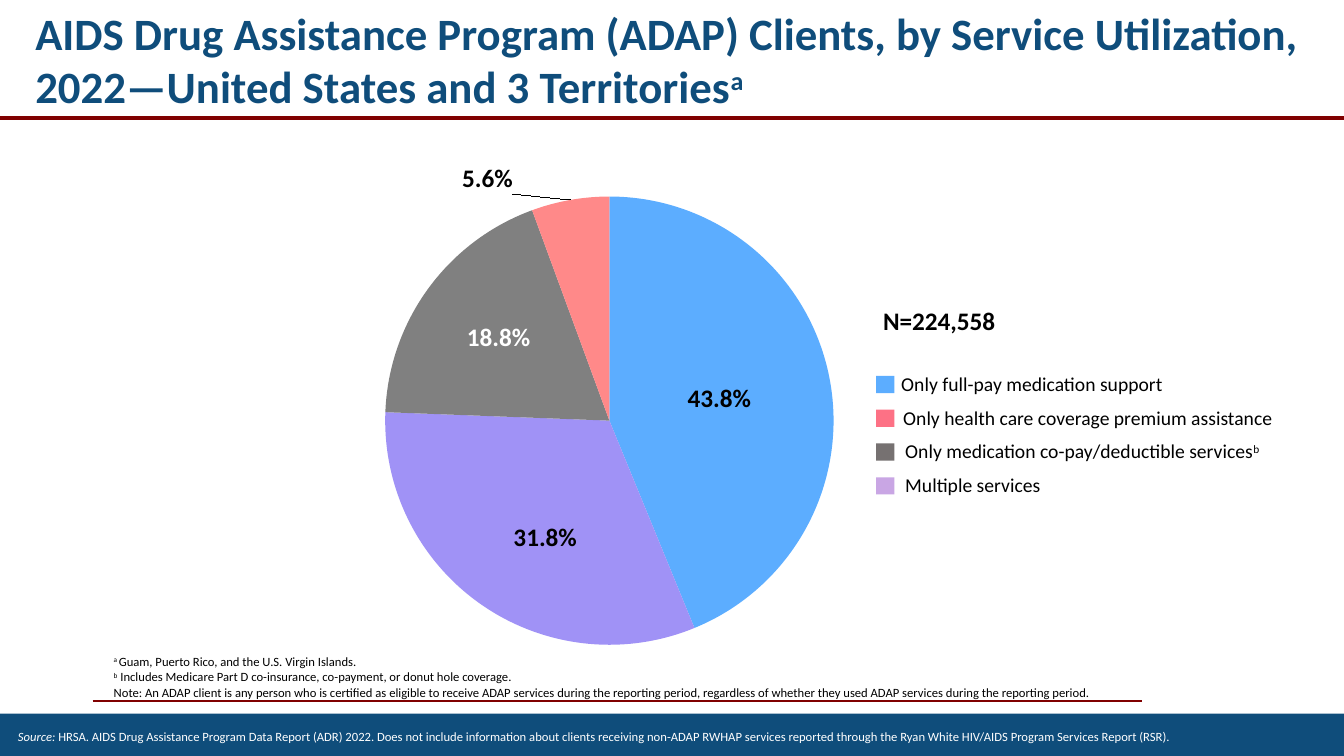
from lxml import etree
from pptx import Presentation
from pptx.chart.data import CategoryChartData
from pptx.dml.color import RGBColor
from pptx.enum.chart import XL_CHART_TYPE, XL_LABEL_POSITION as POS
from pptx.enum.shapes import MSO_CONNECTOR, MSO_SHAPE
from pptx.enum.text import MSO_ANCHOR, MSO_AUTO_SIZE, PP_ALIGN
from pptx.oxml import parse_xml
from pptx.oxml.ns import nsdecls, qn
from pptx.util import Inches, Pt

COLORS = {
    "navy": "0F4D7B", "maroon": "800000", "white": "FFFFFF", "black": "000000",
    "blue": "5CADFF", "purple": "A092F6", "gray": "808080", "coral": "FF8989",
    "key_coral": "FD7185", "key_gray": "767171", "key_lilac": "C9A6E4",
}


def rgb(name):
    return RGBColor.from_string(COLORS[name])


def write(tf, paragraphs, size, color="black", bold=False, anchor=MSO_ANCHOR.TOP):
    """Fill a text frame; each run is (text, style), style "", "italic" or "super"."""
    tf.word_wrap = True
    tf.auto_size = MSO_AUTO_SIZE.NONE
    tf.vertical_anchor = anchor
    for i, runs in enumerate(paragraphs):
        p = tf.paragraphs[0] if i == 0 else tf.add_paragraph()
        p.alignment = PP_ALIGN.LEFT
        for text, style in runs:
            r = p.add_run()
            r.text = text
            r.font.name = "Calibri"
            r.font.size = Pt(size)
            r.font.bold = bold
            r.font.italic = style == "italic"
            r.font.color.rgb = rgb(color)
            if style == "super":
                r.font._element.set("baseline", "30000")


prs = Presentation()
prs.slide_width, prs.slide_height = Inches(13.33), Inches(7.5)
slide = prs.slides.add_slide(prs.slide_layouts[5])
shapes = slide.shapes

# Rules under the title and above the source band
for x1, x2, y, width in [(0.92, 11.33, 6.95, 1.5), (0, 13.33, 1.17, 3)]:
    line = shapes.add_connector(MSO_CONNECTOR.STRAIGHT, Inches(x1), Inches(y), Inches(x2), Inches(y))
    line.line.color.rgb = rgb("maroon")
    line.line.width = Pt(width)
    etree.SubElement(line._element.spPr, qn("a:effectLst"))

# Filled rectangles: source band and legend keys
legend = [
    ("blue", 8.84, [("Only full-pay medication support", "")]),
    ("key_coral", 8.86, [("Only health care coverage premium assistance", "")]),
    ("key_gray", 8.88, [("Only medication co-pay/deductible services", ""), ("b", "super")]),
    ("key_lilac", 8.88, [("Multiple services", "")]),
]
legend_top, legend_step = 3.64, 0.335
rects = [("navy", 0, 7.08, 13.33, 0.42)]
rects += [(color, 8.69, legend_top + 0.09 + i * legend_step, 0.18, 0.17)
          for i, (color, _, _) in enumerate(legend)]
for color, *box in rects:
    sp = shapes.add_shape(MSO_SHAPE.RECTANGLE, *map(Inches, box))
    sp.shadow.inherit = False
    sp.fill.solid()
    sp.fill.fore_color.rgb = rgb(color)
    sp.line.fill.background()

# Title
title = shapes.title
title.left, title.top, title.width, title.height = map(Inches, (0.25, 0, 13.08, 1.17))
write(title.text_frame, [[
    ("AIDS Drug Assistance Program (ADAP) Clients, by Service Utilization, "
     "2022—United States and 3 Territories", ""),
    ("a", "super")]], 32, "navy", bold=True, anchor=MSO_ANCHOR.MIDDLE)

# Pie chart
data = CategoryChartData(number_format="0.0%")
data.categories = ["1", "2", "3", "4"]
data.add_series("Series 1", (0.438, 0.318, 0.188, 0.056))
chart = shapes.add_chart(XL_CHART_TYPE.PIE, *map(Inches, (2.37, 0.8, 7.97, 5.69)), data).chart
chart.has_legend = False
chart.font.name = "Calibri"
chart.font.size = Pt(10)
chart.font.color.rgb = rgb("black")


def layout(x, y, extra="", mode=""):
    return parse_xml(f'<c:layout {nsdecls("c")}><c:manualLayout>{mode}<c:x val="{x}"/>'
                     f'<c:y val="{y}"/>{extra}</c:manualLayout></c:layout>')


edge = '<c:xMode val="edge"/><c:yMode val="edge"/>'
plot_area = chart._chartSpace.chart.plotArea
for old in plot_area.findall(qn("c:layout")):
    plot_area.remove(old)
plot_area.insert(0, layout(0.182, 0.2, '<c:w val="0.558"/><c:h val="0.786"/>',
                           '<c:layoutTarget val="inner"/>' + edge))

# Client count, set as the chart title beside the pie
chart.has_title = True
write(chart.chart_title.text_frame, [[("N=224,558", "")]], 18, bold=True)
chart_title = chart.chart_title._element
for old in chart_title.findall(qn("c:layout")):
    chart_title.remove(old)
chart_title.find(qn("c:tx")).addnext(layout(0.796, 0.38, mode=edge))

# Slices and their labels, with each label's shift from its default place
plot = chart.plots[0]
plot.vary_by_categories = True
series = plot.series[0]
slices = [
    ("blue", "black", POS.CENTER, None),
    ("purple", "black", POS.CENTER, (0, 0.044)),
    ("gray", "white", POS.CENTER, (-0.025, -0.03)),
    ("coral", "black", POS.OUTSIDE_END, (-0.07, 0)),
]
for i, (fill, ink, position, shift) in enumerate(slices):
    point = series.points[i]
    point.format.fill.solid()
    point.format.fill.fore_color.rgb = rgb(fill)
    point.format.line.fill.background()
    label = point.data_label
    label.font.name = "Calibri"
    label.font.size = Pt(18)
    label.font.bold = True
    label.font.color.rgb = rgb(ink)
    label.position = position
    if shift:
        label._get_or_add_dLbl().insert(1, layout(*shift))
labels = series.data_labels
labels.show_value = True
labels.number_format = "0.0%"
labels.number_format_is_linked = False

# Text boxes: legend, footnotes and source
for i, (_, x, runs) in enumerate(legend):
    box = shapes.add_textbox(Inches(x), Inches(legend_top + i * legend_step), Inches(4.04), Inches(0.34))
    write(box.text_frame, [runs], 14)

notes = shapes.add_textbox(*map(Inches, (1.03, 6.44, 10.2, 0.71)))
write(notes.text_frame, [
    [("a ", "super"), ("Guam, Puerto Rico, and the U.S. Virgin Islands.", "")],
    [("b", "super"), (" Includes Medicare Part D co-insurance, co-payment, or donut hole coverage.", "")],
    [("Note: An ADAP client is any person who is certified as eligible to receive ADAP services "
      "during the reporting period, regardless of whether they used ADAP services during the "
      "reporting period.", "")],
], 9)

source = shapes.add_textbox(*map(Inches, (0.08, 7.18, 12.26, 0.25)))
write(source.text_frame, [[
    ("Source: ", "italic"),
    ("HRSA. AIDS Drug Assistance Program Data Report (ADR) 2022. Does not include information about "
     "clients receiving non-ADAP RWHAP services reported through the Ryan White HIV/AIDS Program "
     "Services Report (RSR).", "")]], 9, "white")

prs.save("out.pptx")
